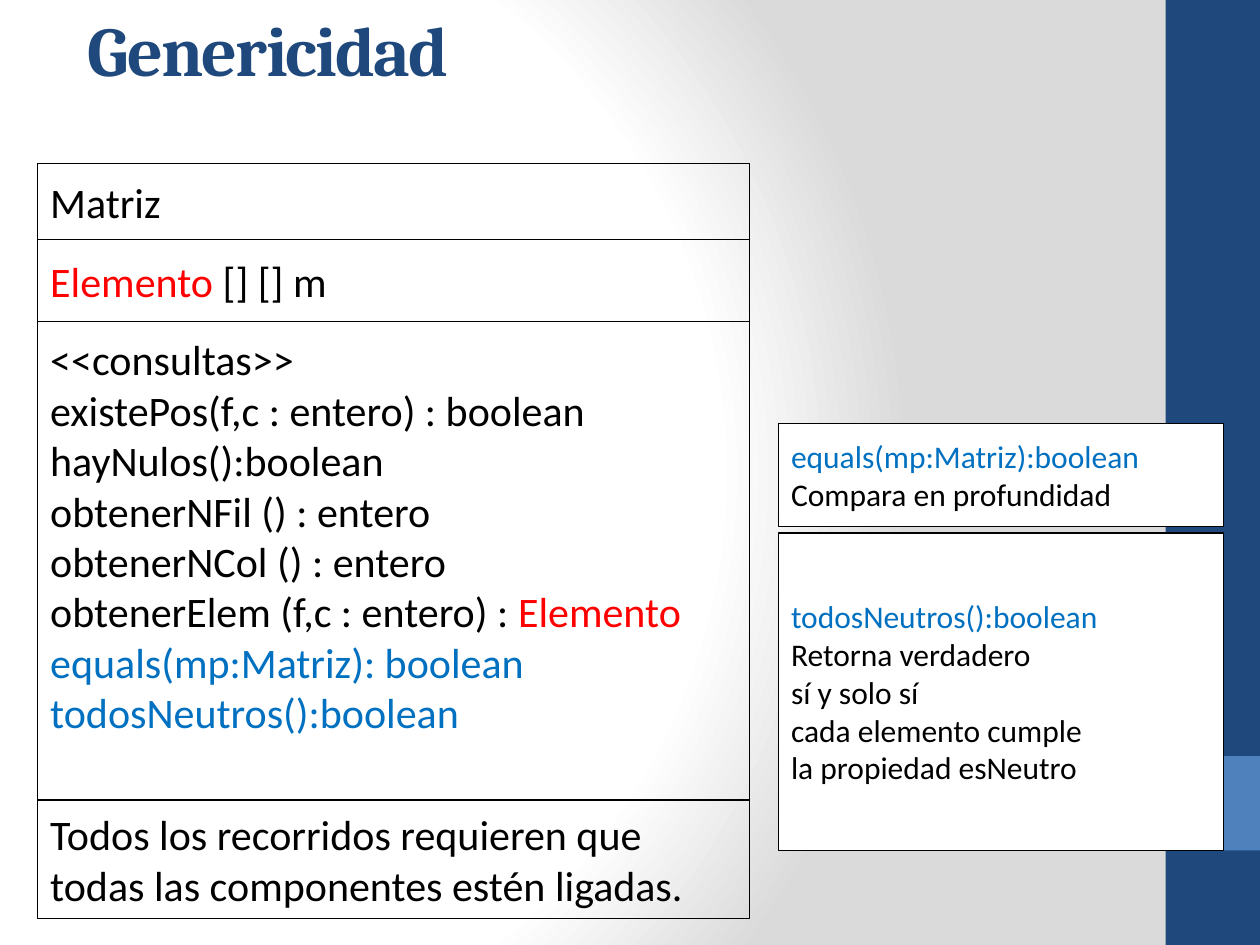
from dataclasses import dataclass

from pptx import Presentation
from pptx.dml.color import RGBColor
from pptx.enum.shapes import MSO_SHAPE
from pptx.enum.text import MSO_ANCHOR, PP_ALIGN
from pptx.oxml import parse_xml
from pptx.oxml.ns import nsdecls
from pptx.util import Inches, Pt

RECT = MSO_SHAPE.RECTANGLE
MIDDLE = MSO_ANCHOR.MIDDLE
LEFT = PP_ALIGN.LEFT


@dataclass(frozen=True)
class Theme:
    navy: str = "1F497D"
    blue: str = "4F81BD"
    black: str = "000000"
    white: str = "FFFFFF"
    gray: str = "DADADA"
    generic: str = "FF0000"
    method: str = "0070C0"
    heading_font: str = "Cambria"
    body_font: str = "Calibri"
    title_size: int = 40
    class_size: int = 24
    note_size: int = 18
    border: float = 0.75


THEME = Theme()

CLASS_LEFT, CLASS_TOP, CLASS_WIDTH = 0.3, 1.3, 5.65
NOTE_LEFT, NOTE_WIDTH = 6.18, 3.53

# Each line is a list of (text, colour) runs.
NAME = [[("Matriz", THEME.black)]]
ATTRIBUTES = [[("Elemento", THEME.generic), (" [] [] m", THEME.black)]]
QUERIES = [
    [("<<consultas>>", THEME.black)],
    [("existePos(f,c : entero) : boolean", THEME.black)],
    [("hayNulos():boolean", THEME.black)],
    [("obtenerNFil () : entero", THEME.black)],
    [("obtenerNCol () : entero", THEME.black)],
    [("obtenerElem (f,c : entero) : ", THEME.black), ("Elemento", THEME.generic)],
    [("equals(mp:Matriz): boolean", THEME.method)],
    [("todosNeutros():boolean", THEME.method)],
]
REQUIREMENT = [
    [("Todos los recorridos requieren que", THEME.black)],
    [("todas las componentes estén ligadas.", THEME.black)],
]
# (height, lines, bottom inset)
COMPARTMENTS = [
    (0.6, NAME, 0.05),
    (0.65, ATTRIBUTES, 0.05),
    (3.8, QUERIES, 0.45),
    (0.94, REQUIREMENT, 0.05),
]
EQUALS_NOTE = [
    [("equals(mp:Matriz):boolean", THEME.method)],
    [("Compara en profundidad", THEME.black)],
]
NEUTRAL_NOTE = [
    [("todosNeutros():boolean", THEME.method)],
    [("Retorna verdadero", THEME.black)],
    [("sí y solo sí", THEME.black)],
    [("cada elemento cumple", THEME.black)],
    [("la propiedad esNeutro", THEME.black)],
]


def rgb(color):
    return RGBColor.from_string(color)


def set_background(s):
    """Radial gradient, white on the left and gray on the right."""
    stops = "".join(
        f'<a:gs pos="{pos * 1000}"><a:srgbClr val="{color}"/></a:gs>'
        for pos, color in ((0, THEME.white), (75, THEME.white), (100, THEME.gray))
    )
    bg = parse_xml(
        f'<p:bg {nsdecls("p", "a")}><p:bgPr><a:gradFill rotWithShape="1">'
        f'<a:gsLst>{stops}</a:gsLst><a:path path="circle">'
        '<a:fillToRect l="20000" t="50000" r="100000" b="50000"/></a:path>'
        "</a:gradFill><a:effectLst/></p:bgPr></p:bg>"
    )
    s.element.cSld.insert(0, bg)


def add_rect(s, left, top, width, height, fill=None, line=None):
    sp = s.shapes.add_shape(
        RECT, Inches(left), Inches(top), Inches(width), Inches(height)
    )
    sp.shadow.inherit = False
    if fill:
        sp.fill.solid()
        sp.fill.fore_color.rgb = rgb(fill)
    else:
        sp.fill.background()
    if line:
        sp.line.color.rgb = rgb(line)
        sp.line.width = Pt(THEME.border)
    else:
        sp.line.fill.background()
    return sp


def add_run(p, text, font, size, color):
    r = p.add_run()
    r.text = text
    r.font.name = font
    r.font.size = Pt(size)
    r.font.color.rgb = rgb(color)
    return r


def write_lines(sp, lines, size):
    tf = sp.text_frame
    tf.word_wrap = True
    tf.vertical_anchor = MIDDLE
    for i, line in enumerate(lines):
        p = tf.add_paragraph() if i else tf.paragraphs[0]
        p.alignment = LEFT
        for text, color in line:
            add_run(p, text, THEME.body_font, size, color)


def add_class_diagram(s):
    top = CLASS_TOP
    for height, lines, bottom_inset in COMPARTMENTS:
        sp = add_rect(s, CLASS_LEFT, top, CLASS_WIDTH, height, line=THEME.black)
        write_lines(sp, lines, THEME.class_size)
        sp.text_frame.margin_bottom = Inches(bottom_inset)
        top += height


def add_note(s, top, height, lines):
    sp = add_rect(s, NOTE_LEFT, top, NOTE_WIDTH, height, THEME.white, THEME.black)
    write_lines(sp, lines, THEME.note_size)


def add_title(s, text):
    tb = s.shapes.add_textbox(Inches(0.6), 0, Inches(8.33), Inches(1.25))
    tf = tb.text_frame
    tf.word_wrap = True
    r = add_run(
        tf.paragraphs[0], text, THEME.heading_font, THEME.title_size, THEME.navy
    )
    r.font.bold = True
    r.font._element.set("spc", "-100")


def main():
    prs = Presentation()
    prs.slide_width, prs.slide_height = Inches(10), Inches(7.5)
    s = prs.slides.add_slide(prs.slide_layouts[6])
    set_background(s)
    add_rect(s, 9.25, 0, 0.75, 7.5, THEME.navy)
    add_rect(s, 9.25, 6, 0.75, 0.75, THEME.blue)
    add_class_diagram(s)
    add_note(s, 4.23, 2.52, NEUTRAL_NOTE)
    add_title(s, "Genericidad")
    add_note(s, 3.36, 0.82, EQUALS_NOTE)
    prs.save("out.pptx")


if __name__ == "__main__":
    main()
